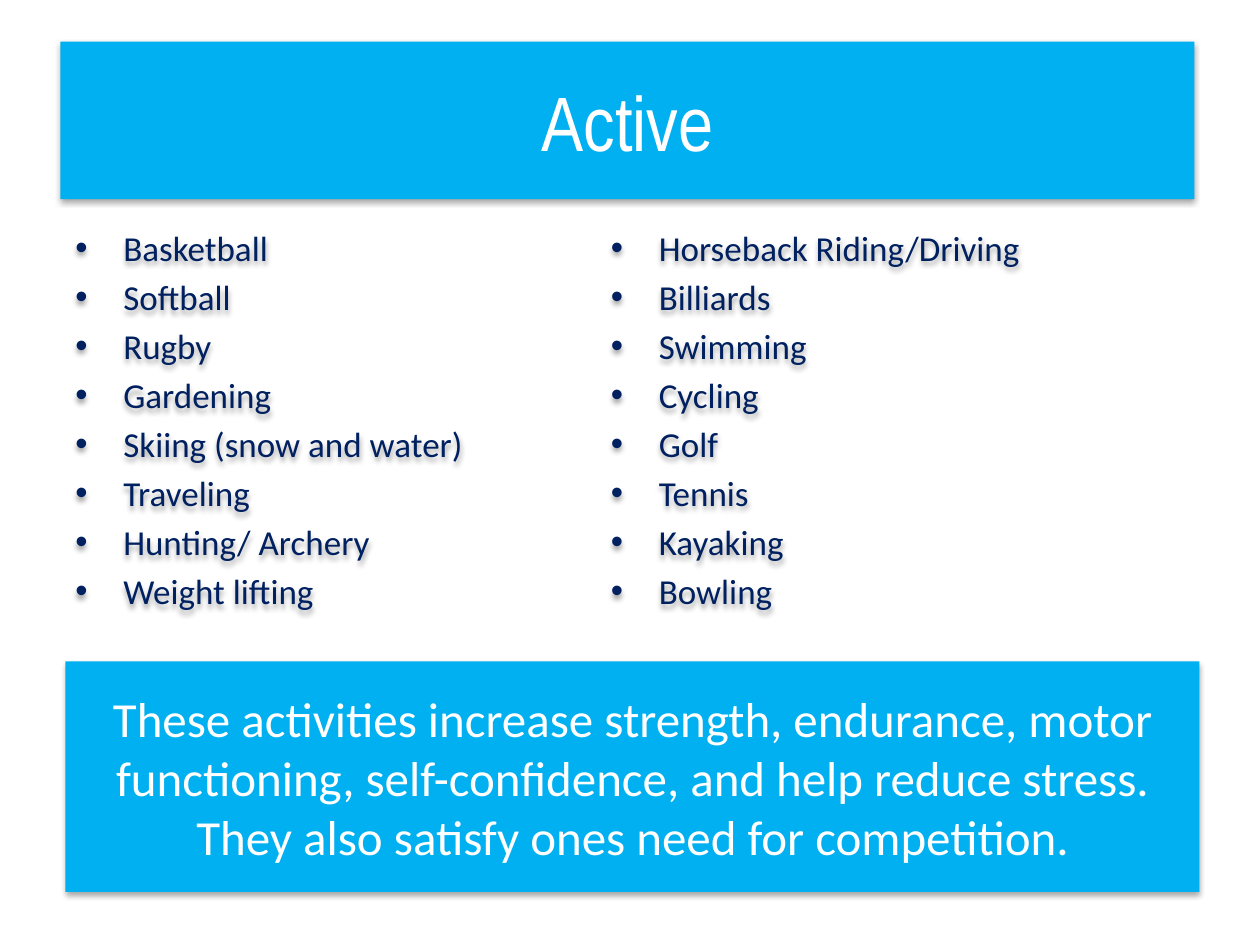
from lxml.etree import SubElement
from pptx import Presentation
from pptx.dml.color import RGBColor
from pptx.enum.shapes import MSO_SHAPE
from pptx.enum.text import MSO_ANCHOR, PP_ALIGN
from pptx.oxml.ns import qn
from pptx.util import Inches, Pt

TITLE = "Active"
COLUMNS = [
    ((0.5, 1.75, 4.42, 3.33),
     ["Basketball", "Softball", "Rugby", "Gardening", "Skiing (snow and water)",
      "Traveling", "Hunting/ Archery", "Weight lifting"]),
    ((4.75, 1.75, 4.58, 3.25),
     ["Horseback Riding/Driving", "Billiards", "Swimming", "Cycling", "Golf",
      "Tennis", "Kayaking", "Bowling"]),
]
SUMMARY = ("These activities increase strength, endurance, motor functioning, "
           "self-confidence, and help reduce stress. They also satisfy ones "
           "need for competition.")
TITLE_BOX = (0.48, 0.33, 9, 1.25)
SUMMARY_BOX = (0.52, 5.25, 9, 1.83)

THEME = {
    "banner": RGBColor(0x00, 0xB0, 0xF0),
    "light": RGBColor(0xFF, 0xFF, 0xFF),
    "dark": RGBColor(0x00, 0x20, 0x60),
    "title_font": "Arial Narrow", "body_font": "Calibri",
    "title_size": 44, "list_size": 20, "summary_size": 28,
    "indent": Inches(0.38),
}


def format_runs(p, font, size, color):
    for r in p.runs:
        r.font.name = font
        r.font.size = Pt(size)
        r.font.color.rgb = color


def add_shadow(shape):
    """Cast a soft shadow straight down, on the outline or on unfilled text."""
    shape.shadow.inherit = False
    effects = shape._element.spPr.find(qn("a:effectLst"))
    shadow = SubElement(effects, qn("a:outerShdw"), blurRad=str(Pt(3.1)),
                        dist=str(Pt(1.8)), dir="5400000", rotWithShape="0")
    color = SubElement(shadow, qn("a:srgbClr"), val="000000")
    SubElement(color, qn("a:alpha"), val="35000")


def add_bullet(p):
    pPr = p._p.get_or_add_pPr()
    pPr.set("marL", str(THEME["indent"]))
    pPr.set("indent", str(-THEME["indent"]))
    SubElement(pPr, qn("a:buFont"), typeface="Arial")
    SubElement(pPr, qn("a:buChar"), char="•")


def make_banner(shape, box, text, font, size):
    shape.left, shape.top, shape.width, shape.height = map(Inches, box)
    shape.fill.solid()
    shape.fill.fore_color.rgb = THEME["banner"]
    shape.line.fill.background()
    add_shadow(shape)
    tf = shape.text_frame
    tf.word_wrap = True
    tf.vertical_anchor = MSO_ANCHOR.MIDDLE
    tf.text = text
    p = tf.paragraphs[0]
    p.alignment = PP_ALIGN.CENTER
    format_runs(p, font, size, THEME["light"])


def add_list(s, box, items):
    sp = s.shapes.add_textbox(*map(Inches, box))
    add_shadow(sp)
    tf = sp.text_frame
    tf.word_wrap = True
    tf.text = "\n".join(items)
    for i, p in enumerate(tf.paragraphs):
        add_bullet(p)
        if i:
            p.space_before = Pt(THEME["list_size"] * 0.2)
        format_runs(p, THEME["body_font"], THEME["list_size"], THEME["dark"])


def main():
    prs = Presentation()
    prs.slide_width, prs.slide_height = Inches(10), Inches(7.5)
    s = prs.slides.add_slide(prs.slide_layouts[5])
    make_banner(s.shapes.title, TITLE_BOX, TITLE,
                THEME["title_font"], THEME["title_size"])
    for box, items in COLUMNS:
        add_list(s, box, items)
    summary = s.shapes.add_shape(MSO_SHAPE.RECTANGLE, *map(Inches, SUMMARY_BOX))
    make_banner(summary, SUMMARY_BOX, SUMMARY,
                THEME["body_font"], THEME["summary_size"])
    prs.save("out.pptx")


if __name__ == "__main__":
    main()
